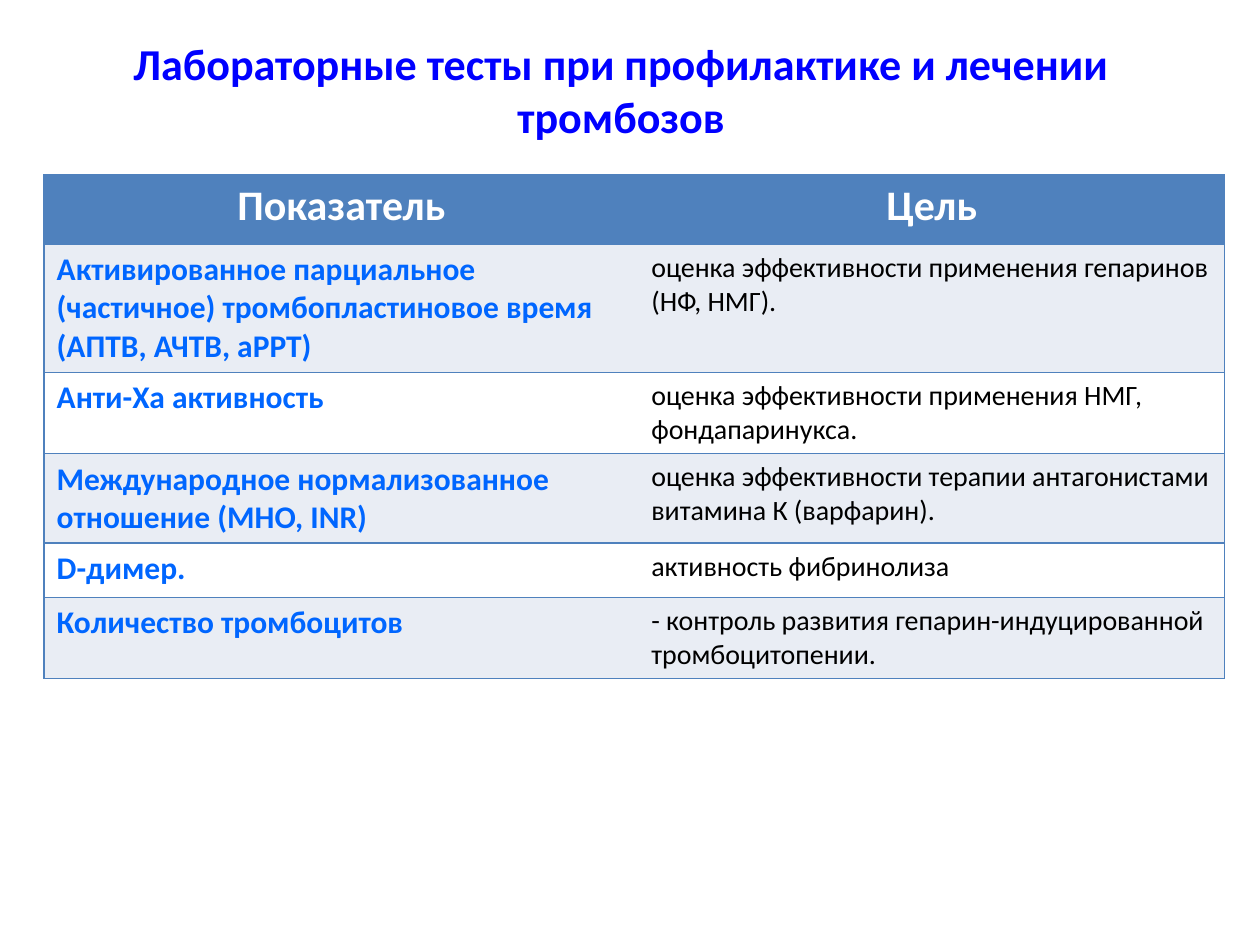
from pptx import Presentation
from pptx.dml.color import RGBColor as Rgb
from pptx.enum.text import MSO_ANCHOR as Anchor, MSO_AUTO_SIZE as AutoSize, PP_ALIGN as Align
from pptx.oxml import parse_xml
from pptx.oxml.ns import nsdecls
from pptx.util import Inches, Pt

COLORS = {
    "title": "0000FF",
    "header": "4F81BD",
    "band": "E9EDF4",
    "plain": "FFFFFF",
    "test": "0066FF",
    "goal": "000000",
}
HEADINGS = ("Показатель", "Цель")
TESTS = [
    ("Активированное парциальное (частичное) тромбопластиновое время (АПТВ, АЧТВ, aPPT)",
     "оценка эффективности применения гепаринов (НФ, НМГ)."),
    ("Анти-Ха активность", "оценка эффективности применения НМГ, фондапаринукса."),
    ("Международное нормализованное отношение (МНО, INR)",
     "оценка эффективности терапии антагонистами витамина К (варфарин)."),
    ("D-димер.", "активность фибринолиза"),
    ("Количество тромбоцитов",
     "- контроль развития гепарин-индуцированной тромбоцитопении."),
]
COLUMN_WIDTHS = (4.72, 4.65)
ROW_HEIGHTS = (0.55, 1.02, 0.47, 0.67, 0.43, 0.56)


def write(frame, text, size, color, bold=True, align=Align.LEFT, font="Calibri"):
    paragraph = frame.paragraphs[0]
    paragraph.alignment = align
    run = paragraph.add_run()
    run.text = text
    run.font.name = font
    run.font.size = Pt(size)
    run.font.bold = bold
    run.font.color.rgb = Rgb.from_string(COLORS[color])


class TestsSlide:
    def __init__(self, deck):
        self.width, self.height = deck.slide_width, deck.slide_height
        self.slide = deck.slides.add_slide(deck.slide_layouts[5])

    def box(self, left, top, width, height):
        return (round(left * self.width), round(top * self.height),
                round(width * self.width), round(height * self.height))

    def title(self, text, *shares):
        heading = self.slide.shapes.title
        heading.left, heading.top, heading.width, heading.height = self.box(*shares)
        frame = heading.text_frame
        frame.word_wrap = True
        frame.auto_size = AutoSize.NONE
        frame.vertical_anchor = Anchor.MIDDLE
        write(frame, text, 25.2, "title", align=Align.CENTER)

    def borders(self, cell, hidden):
        properties = cell._tc.get_or_add_tcPr()
        for place, side in enumerate("LRTB"):
            paint = "<a:noFill/>" if side == hidden else (
                f'<a:solidFill><a:srgbClr val="{COLORS["header"]}"/></a:solidFill>')
            properties.insert(place, parse_xml(
                f'<a:ln{side} {nsdecls("a")} w="{Pt(1)}">{paint}</a:ln{side}>'))

    def cell(self, cell, text, fill, hidden, **style):
        cell.fill.solid()
        cell.fill.fore_color.rgb = Rgb.from_string(COLORS[fill])
        self.borders(cell, hidden)
        write(cell.text_frame, text, **style)

    def table(self, headings, tests, *shares):
        holder = self.slide.shapes.add_table(len(tests) + 1, len(headings), *self.box(*shares))
        grid = holder.table
        for column, width in zip(grid.columns, COLUMN_WIDTHS):
            column.width = Inches(width)
        for row, height in zip(grid.rows, ROW_HEIGHTS):
            row.height = Inches(height)
        header = dict(size=24, color="plain", align=Align.CENTER)
        columns = (dict(size=18, color="test"), dict(size=16, color="goal", bold=False))
        for r, texts in enumerate([headings, *tests]):
            fill = "header" if r == 0 else "band" if r % 2 else "plain"
            for c, text in enumerate(texts):
                style = columns[c] if r else header
                self.cell(grid.cell(r, c), text, fill, "RL"[c], **style)


def main():
    deck = Presentation()
    deck.slide_width, deck.slide_height = Inches(10), Inches(7.5)
    page = TestsSlide(deck)
    page.title("Лабораторные тесты при профилактике и лечении тромбозов",
               0.043, 0.06, 0.9, 0.07)
    page.table(HEADINGS, TESTS, 0.035, 0.185, 0.937, 0.54)
    deck.save("out.pptx")


if __name__ == "__main__":
    main()
